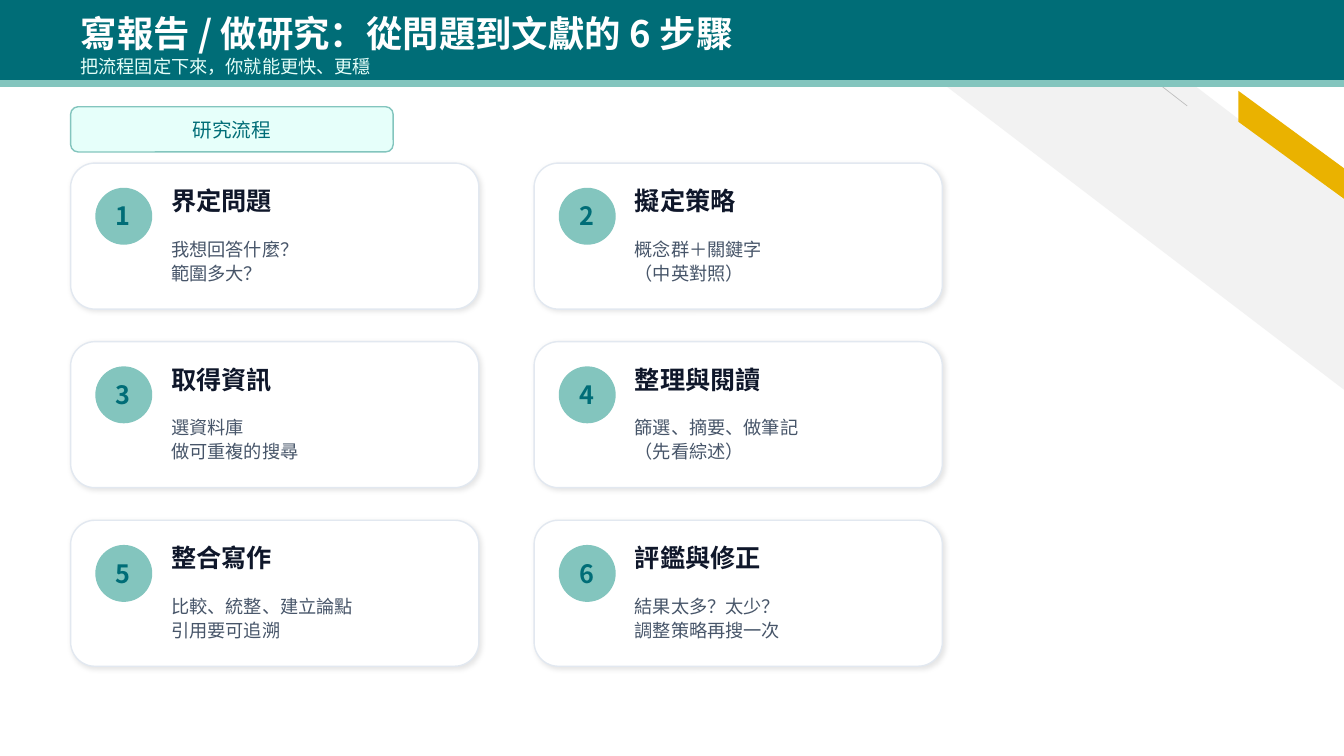
from lxml.etree import SubElement
from pptx import Presentation
from pptx.dml.color import RGBColor
from pptx.enum.shapes import MSO_CONNECTOR, MSO_SHAPE
from pptx.enum.text import MSO_ANCHOR, MSO_AUTO_SIZE, PP_ALIGN
from pptx.oxml.ns import qn
from pptx.util import Cm, Pt

TITLE = "寫報告 / 做研究：從問題到文獻的 6 步驟"
SUBTITLE = "把流程固定下來，你就能更快、更穩"
TAG = "研究流程"
STEPS = [
    ("界定問題", "我想回答什麼？\n範圍多大？"),
    ("擬定策略", "概念群＋關鍵字\n（中英對照）"),
    ("取得資訊", "選資料庫\n做可重複的搜尋"),
    ("整理與閱讀", "篩選、摘要、做筆記\n（先看綜述）"),
    ("整合寫作", "比較、統整、建立論點\n引用要可追溯"),
    ("評鑑與修正", "結果太多？太少？\n調整策略再搜一次"),
]

FONT = "Noto Sans CJK TC"
TEAL = RGBColor(0x00, 0x6D, 0x77)
AQUA = RGBColor(0x83, 0xC5, 0xBE)
MINT = RGBColor(0xE6, 0xFF, 0xFA)
WHITE = RGBColor(0xFF, 0xFF, 0xFF)
BORDER = RGBColor(0xE2, 0xE8, 0xF0)
INK = RGBColor(0x0F, 0x17, 0x2A)
SLATE = RGBColor(0x47, 0x55, 0x69)
PALE_GREY = RGBColor(0xF2, 0xF2, 0xF2)
LINE_GREY = RGBColor(0xBF, 0xBF, 0xBF)
GOLD = RGBColor(0xEA, 0xB2, 0x00)

# Lengths in centimetres
WIDTH, HEIGHT = 33.87, 19.05
STRIPE = [(21, 0), (27.28, 0), (WIDTH, 5.03), (WIDTH, 9.82)]
RIBBON = [(31.21, 2.29), (WIDTH, 4.24), (WIDTH, 5.01), (31.21, 3.07)]
MARGIN = 1.78
CARD_TOP, CARD_WIDTH, CARD_HEIGHT = 4.11, 10.29, 3.68
COLUMN_STEP, ROW_STEP = 11.68, 4.5
COLUMNS = 2


def add_polygon(slide, points, color):
    corners = [(Cm(x), Cm(y)) for x, y in points]
    builder = slide.shapes.build_freeform(*corners[0])
    builder.add_line_segments(corners[1:])
    shape = builder.convert_to_shape()
    shape.shadow.inherit = False
    shape.fill.solid()
    shape.fill.fore_color.rgb = color
    shape.line.fill.background()


def add_box(slide, kind, box, fill, line):
    shape = slide.shapes.add_shape(kind, *map(Cm, box))
    shape.shadow.inherit = False
    shape.fill.solid()
    shape.fill.fore_color.rgb = fill
    shape.line.color.rgb = line
    shape.line.width = Pt(1)
    return shape


def add_soft_shadow(shape):
    effects = shape._element.spPr.find(qn("a:effectLst"))
    shadow = SubElement(effects, qn("a:outerShdw"), blurRad=str(Pt(4)),
                        dist=str(Pt(1.6)), dir="2700000", rotWithShape="0")
    color = SubElement(shadow, qn("a:srgbClr"), val="000000")
    SubElement(color, qn("a:alpha"), val="10000")


def format_text(shape, text, size, color, bold=False,
                align=PP_ALIGN.LEFT, spacing=None):
    frame = shape.text_frame
    frame.text = text
    frame.word_wrap = True
    frame.auto_size = MSO_AUTO_SIZE.NONE
    frame.vertical_anchor = MSO_ANCHOR.MIDDLE
    for paragraph in frame.paragraphs:
        paragraph.alignment = align
        paragraph.line_spacing = spacing
        for run in paragraph.runs:
            run.font.name = FONT
            run.font.size = Pt(size)
            run.font.bold = bold
            run.font.color.rgb = color
            SubElement(run.font._element, qn("a:ea"), typeface=FONT)


def add_text(slide, box, *args, **options):
    format_text(slide.shapes.add_textbox(*map(Cm, box)), *args, **options)


def add_backdrop(slide):
    add_polygon(slide, STRIPE, PALE_GREY)
    line = slide.shapes.add_connector(
        MSO_CONNECTOR.STRAIGHT, Cm(29.92), Cm(2.67), Cm(26.47), Cm(0))
    line.line.color.rgb = LINE_GREY
    line.line.width = Pt(0.5)
    SubElement(line._element.spPr, qn("a:effectLst"))
    add_polygon(slide, RIBBON, GOLD)


def add_header(slide):
    add_box(slide, MSO_SHAPE.RECTANGLE, (0, 0, WIDTH, 2.03), TEAL, TEAL)
    title = slide.shapes.title
    title.left, title.top = Cm(MARGIN), Cm(0.3)
    title.width, title.height = Cm(29.21), Cm(1.07)
    format_text(title, TITLE, 26, WHITE, bold=True)
    slide.shapes._spTree.append(title._element)  # bring in front of the band
    add_text(slide, (MARGIN, 1.4, 29.21, 0.56), SUBTITLE, 13, MINT)
    add_box(slide, MSO_SHAPE.RECTANGLE, (0, 2.03, WIDTH, 0.15), AQUA, AQUA)
    add_box(slide, MSO_SHAPE.ROUNDED_RECTANGLE, (MARGIN, 2.69, 8.13, 1.14), MINT, AQUA)
    add_text(slide, (MARGIN, 2.9, 8.13, 0.76), TAG, 14, TEAL, align=PP_ALIGN.CENTER)


def add_step(slide, index, heading, details):
    row, column = divmod(index, COLUMNS)
    left = MARGIN + column * COLUMN_STEP
    top = CARD_TOP + row * ROW_STEP
    card = add_box(slide, MSO_SHAPE.ROUNDED_RECTANGLE,
                   (left, top, CARD_WIDTH, CARD_HEIGHT), WHITE, BORDER)
    add_soft_shadow(card)
    add_box(slide, MSO_SHAPE.OVAL, (left + 0.64, top + 0.64, 1.4, 1.4), AQUA, AQUA)
    add_text(slide, (left + 0.76, top + 0.76, 1.14, 1.14), str(index + 1),
             18, TEAL, bold=True, align=PP_ALIGN.CENTER)
    add_text(slide, (left + 2.29, top + 0.56, 7.49, 0.76), heading, 18, INK, bold=True)
    add_text(slide, (left + 2.29, top + 1.45, 7.49, 1.98), details, 13, SLATE, spacing=1.1)


def main():
    presentation = Presentation()
    presentation.slide_width, presentation.slide_height = Cm(WIDTH), Cm(HEIGHT)
    slide = presentation.slides.add_slide(presentation.slide_layouts[5])
    add_backdrop(slide)
    add_header(slide)
    for index, (heading, details) in enumerate(STEPS):
        add_step(slide, index, heading, details)
    presentation.save("out.pptx")


if __name__ == "__main__":
    main()
